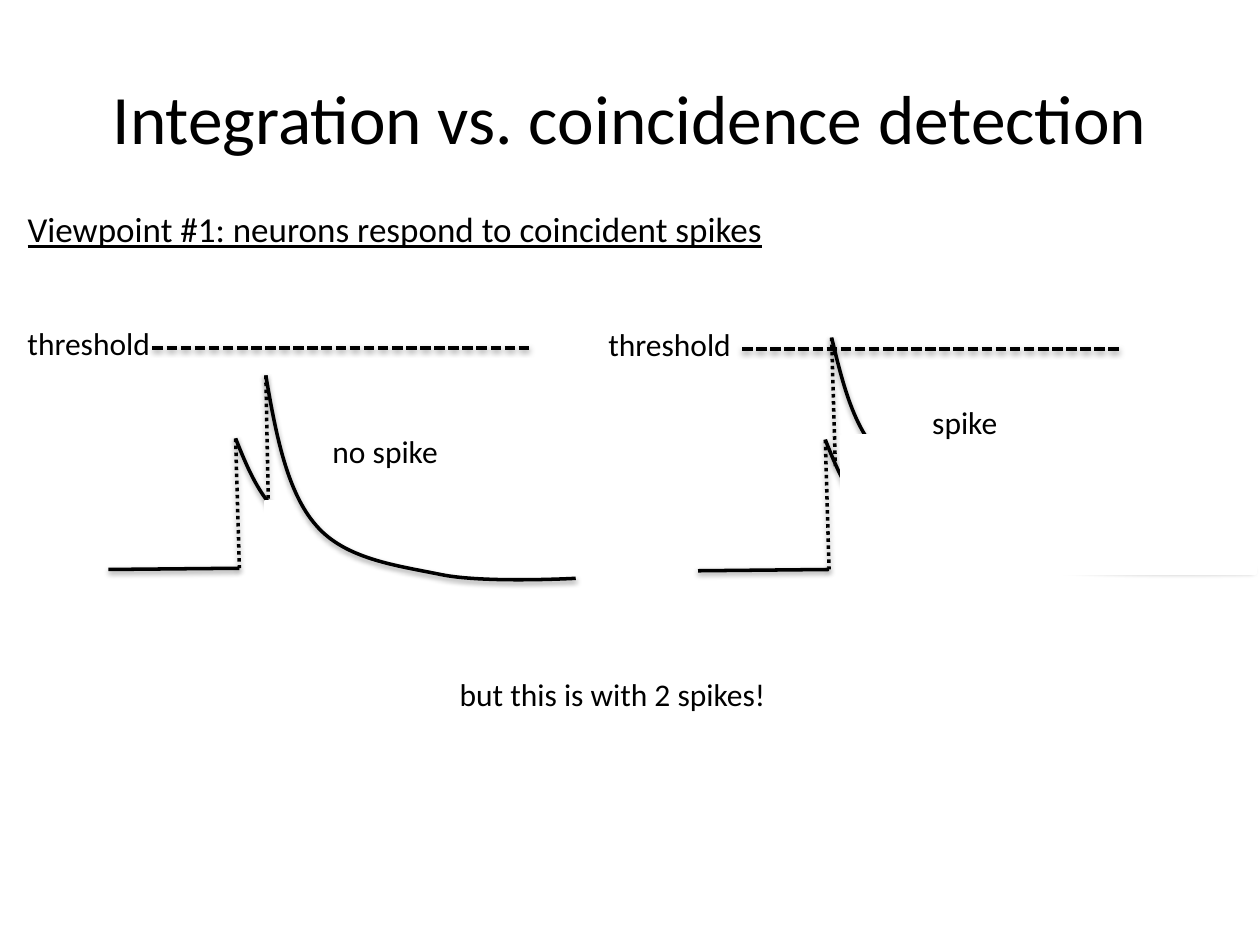
from lxml import etree
from pptx import Presentation
from pptx.dml.color import RGBColor
from pptx.enum.dml import MSO_LINE
from pptx.enum.shapes import MSO_CONNECTOR, MSO_SHAPE
from pptx.enum.text import MSO_ANCHOR, MSO_AUTO_SIZE, PP_ALIGN
from pptx.oxml import parse_xml
from pptx.oxml.ns import nsdecls, qn
from pptx.util import Inches, Pt

STRAIGHT = MSO_CONNECTOR.STRAIGHT
RECTANGLE = MSO_SHAPE.RECTANGLE
DOTTED = MSO_LINE.ROUND_DOT
DASHED = MSO_LINE.SQUARE_DOT
MIDDLE = MSO_ANCHOR.MIDDLE
FIT_TEXT = MSO_AUTO_SIZE.SHAPE_TO_FIT_TEXT
FIXED_SIZE = MSO_AUTO_SIZE.NONE
CENTER = PP_ALIGN.CENTER

COLORS = {"ink": "000000", "paper": "FFFFFF"}
FONT = "Calibri"
LINE_WIDTH = Pt(2)

TITLE = ("Integration vs. coincidence detection", (0.5, 0.3, 9, 1.25))
HEADING = ("Viewpoint #1: neurons respond to coincident spikes", (0.12, 1.6, 6.09, 0.44))
LABELS = [
    ("threshold", (0.12, 2.52, 1.17, 0.4)),
    ("threshold", (4.73, 2.53, 1.17, 0.4)),
    ("no spike", (2.54, 3.38, 1.05, 0.4)),
    ("spike", (7.3, 3.15, 0.72, 0.4)),
    ("but this is with 2 spikes!", (3.55, 5.31, 2.66, 0.4)),
]

# Parts that both panels share, placed for the left panel
REST = ((0.86, 4.52), (1.9, 4.51))
FIRST_JUMP = ((1.87, 3.48), (1.9, 4.51))
FIRST_DECAY = [(1.87, 3.48), (1.99, 3.78), (2.11, 4.07), (2.43, 4.24), (2.75, 4.4),
               (3.32, 4.44), (3.8, 4.48), (4.27, 4.52), (5.27, 4.5), (5.27, 4.5)]
THRESHOLD = ((1.21, 2.76), (4.21, 2.76))

PANELS = [
    {
        "offset": (0, 0),
        "second_jump": ((2.11, 2.98), (2.13, 4.01)),
        "second_decay": [(2.11, 2.98), (2.19, 3.45), (2.28, 3.91), (2.51, 4.17), (2.74, 4.44),
                         (3.16, 4.49), (3.5, 4.56), (3.84, 4.63), (4.57, 4.59), (4.57, 4.59)],
        "decay_on_top": True,
        "covers": [(2.39, 4.08, 2.97, 0.93), (2.11, 3.98, 0.33, 0.67)],
    },
    {
        "offset": (4.68, 0.01),
        "second_jump": ((6.6, 2.68), (6.63, 3.7)),
        "second_decay": [(6.6, 2.68), (6.69, 3.05), (6.78, 3.43), (7.02, 3.64), (7.26, 3.85),
                         (7.7, 3.89), (8.06, 3.95), (8.42, 4), (9.18, 3.98), (9.18, 3.98)],
        "decay_on_top": False,
        "covers": [(6.68, 3.46, 3.28, 1.09), (6.79, 3.99, 0.33, 0.67)],
    },
]


def color(name):
    return RGBColor.from_string(COLORS[name])


def style_trace(shape, dash=None):
    """Black line with a soft shadow below it."""
    shape.line.color.rgb = color("ink")
    shape.line.width = LINE_WIDTH
    if dash is not None:
        shape.line.dash_style = dash
    effects = parse_xml(
        f'<a:effectLst {nsdecls("a")}>'
        '<a:outerShdw blurRad="40000" dist="20000" dir="5400000" rotWithShape="0">'
        f'<a:srgbClr val="{COLORS["ink"]}"><a:alpha val="38000"/></a:srgbClr>'
        '</a:outerShdw></a:effectLst>')
    shape._element.spPr.append(effects)


def add_line(slide, ends, dash=None):
    lengths = [Inches(value) for point in ends for value in point]
    style_trace(slide.shapes.add_connector(STRAIGHT, *lengths), dash)


def add_curve(slide, controls):
    """Draw chained cubic curves that share their end points."""
    start, *others = [(Inches(x), Inches(y)) for x, y in controls]
    builder = slide.shapes.build_freeform(*start)
    builder.add_line_segments(others, close=False)
    curve = builder.convert_to_shape()
    segments = list(curve._element.iter(qn("a:lnTo")))
    for first in range(0, len(segments), 3):
        cubic = etree.Element(qn("a:cubicBezTo"))
        segments[first].addprevious(cubic)
        for segment in segments[first:first + 3]:
            cubic.append(segment[0])
            segment.getparent().remove(segment)
    curve.fill.background()
    style_trace(curve)


def add_cover(slide, box):
    cover = slide.shapes.add_shape(RECTANGLE, *map(Inches, box))
    cover.shadow.inherit = False
    cover.fill.solid()
    cover.fill.fore_color.rgb = color("paper")
    cover.line.color.rgb = color("paper")
    cover.line.width = LINE_WIDTH


def add_text(slide, text, box, size=18, underline=None):
    shape = slide.shapes.add_textbox(*map(Inches, box))
    frame = shape.text_frame
    frame.text = text
    frame.word_wrap = False
    frame.auto_size = FIT_TEXT
    font = frame.paragraphs[0].runs[0].font
    font.name = FONT
    font.size = Pt(size)
    font.underline = underline
    font.color.rgb = color("ink")
    return frame


def add_panel(slide, panel):
    dx, dy = panel["offset"]

    def shifted(points):
        return [(x + dx, y + dy) for x, y in points]

    add_line(slide, shifted(REST))
    add_curve(slide, shifted(FIRST_DECAY))
    add_line(slide, shifted(FIRST_JUMP), DOTTED)
    if not panel["decay_on_top"]:
        add_curve(slide, panel["second_decay"])
    add_line(slide, panel["second_jump"], DOTTED)
    for box in panel["covers"]:
        add_cover(slide, box)
    add_line(slide, shifted(THRESHOLD), DASHED)
    if panel["decay_on_top"]:
        add_curve(slide, panel["second_decay"])


def main():
    presentation = Presentation()
    presentation.slide_width = Inches(10)
    presentation.slide_height = Inches(7.5)
    slide = presentation.slides.add_slide(presentation.slide_layouts[6])

    title = add_text(slide, *TITLE, size=39.6)
    title.word_wrap = True
    title.auto_size = FIXED_SIZE
    title.vertical_anchor = MIDDLE
    title.paragraphs[0].alignment = CENTER

    for panel in PANELS:
        add_panel(slide, panel)
    for text, box in LABELS:
        add_text(slide, text, box)
    add_text(slide, *HEADING, size=20, underline=True)
    presentation.save("out.pptx")


if __name__ == "__main__":
    main()
